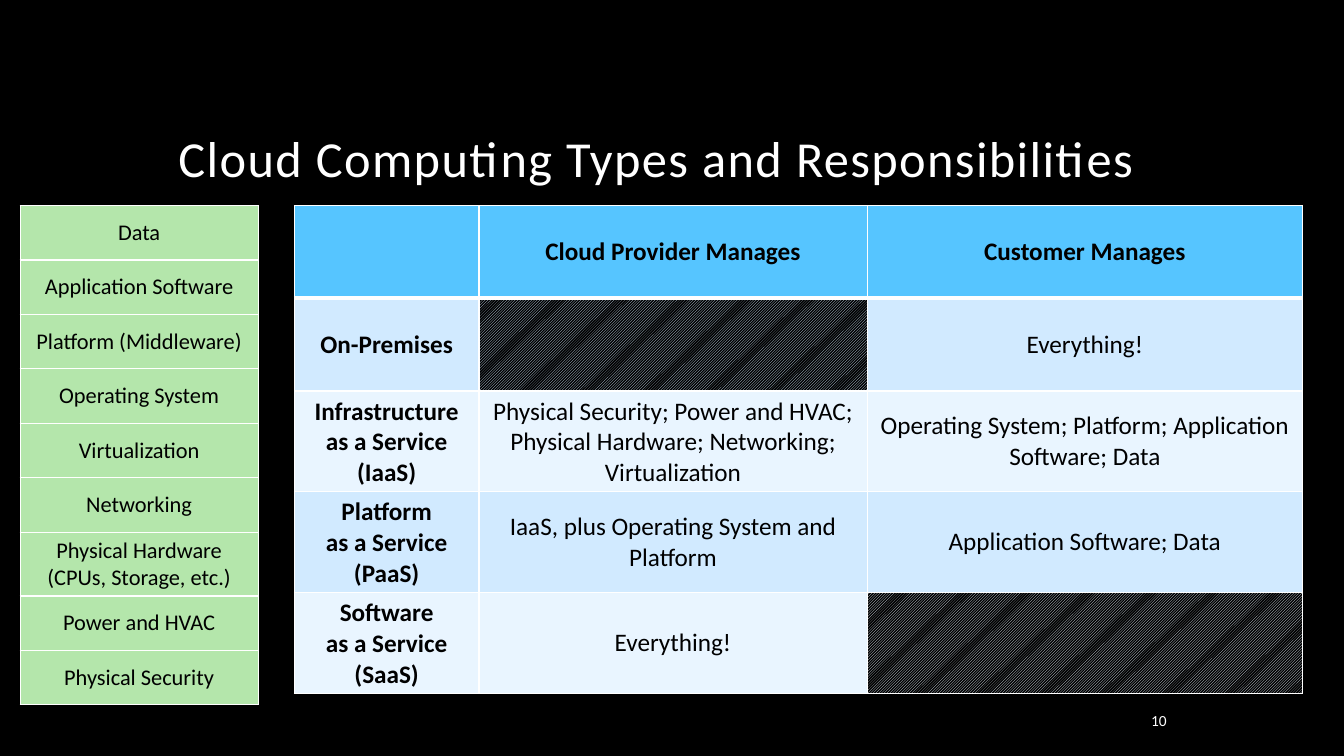
from lxml import etree
from pptx import Presentation
from pptx.dml.color import RGBColor
from pptx.enum.dml import MSO_PATTERN_TYPE
from pptx.enum.text import MSO_ANCHOR, MSO_AUTO_SIZE, PP_ALIGN
from pptx.oxml.ns import qn
from pptx.util import Inches, Pt

LEFT, CENTER, RIGHT = PP_ALIGN.LEFT, PP_ALIGN.CENTER, PP_ALIGN.RIGHT
MIDDLE, BOTTOM = MSO_ANCHOR.MIDDLE, MSO_ANCHOR.BOTTOM
NO_FIT = MSO_AUTO_SIZE.NONE
HATCH = MSO_PATTERN_TYPE.DARK_UPWARD_DIAGONAL

FONT = "Calibri"
BLACK, WHITE = "000000", "FFFFFF"
HEADER, BAND_DARK, BAND_LIGHT = "56C5FF", "D1EAFF", "E9F5FF"
GREEN = "B4E6AB"

LAYERS = [
    "Data", "Application Software", "Platform (Middleware)", "Operating System",
    "Virtualization", "Networking", "Physical Hardware\n(CPUs, Storage, etc.)",
    "Power and HVAC", "Physical Security",
]
RESPONSIBILITIES = [
    ["", "Cloud Provider Manages", "Customer Manages"],
    ["On-Premises", "", "Everything!"],
    ["Infrastructure as a Service\n(IaaS)",
     "Physical Security; Power and HVAC; Physical Hardware; Networking; Virtualization",
     "Operating System; Platform; Application Software; Data"],
    ["Platform\nas a Service\n(PaaS)", "IaaS, plus Operating System and Platform",
     "Application Software; Data"],
    ["Software\nas a Service\n(SaaS)", "Everything!", ""],
]


def rgb(color):
    """Return the colour for a hex string."""
    return RGBColor.from_string(color)


def format_text(tf, size, color, align, bold=False):
    """Format every paragraph of a text frame alike."""
    for p in tf.paragraphs:
        p.alignment = align
        p.font.name = FONT
        p.font.size = Pt(size)
        p.font.bold = bold
        p.font.color.rgb = rgb(color)


def set_borders(cell, top=1, bottom=1):
    """Draw white borders round a cell, widths in points."""
    tc_pr = cell._tc.get_or_add_tcPr()
    for side, width in (("L", 1), ("R", 1), ("T", top), ("B", bottom)):
        ln = etree.SubElement(tc_pr, qn(f"a:ln{side}"), w=str(Pt(width)))
        fill = etree.SubElement(ln, qn("a:solidFill"))
        etree.SubElement(fill, qn("a:srgbClr"), val=WHITE)


def fill_cell(cell, color, hatched=False):
    """Fill a cell plainly, or hatched over black."""
    if hatched:
        cell.fill.patterned()
        cell.fill.pattern = HATCH
        cell.fill.fore_color.rgb = rgb(color)
        cell.fill.back_color.rgb = rgb(BLACK)
    else:
        cell.fill.solid()
        cell.fill.fore_color.rgb = rgb(color)


def add_grid(s, left, top, widths, row_height, rows):
    """Add an empty table with the given column widths and equal rows."""
    frame = s.shapes.add_table(
        rows, len(widths), Inches(left), Inches(top),
        Inches(sum(widths)), Inches(row_height * rows))
    table = frame.table
    for column, width in zip(table.columns, widths):
        column.width = Inches(width)
    for row in table.rows:
        row.height = Inches(row_height)
    return table


def write_cell(cell, text, size, bold=False):
    """Write centred black text in a cell."""
    cell.text = text
    cell.vertical_anchor = MIDDLE
    format_text(cell.text_frame, size, BLACK, CENTER, bold)


def add_title(s, left, top, width, height):
    """Place and format the slide title."""
    sp = s.shapes.title
    sp.left, sp.top, sp.width, sp.height = map(Inches, (left, top, width, height))
    tf = sp.text_frame
    tf.text = "Cloud Computing Types and Responsibilities"
    tf.auto_size = NO_FIT
    tf.vertical_anchor = BOTTOM
    format_text(tf, 36, WHITE, LEFT)
    p = tf.paragraphs[0]
    p.line_spacing = 0.9
    p.runs[0]._r.get_or_add_rPr().set("spc", "100")


def add_responsibilities(s, left, top):
    """Add the table of who manages what."""
    table = add_grid(s, left, top, [1.83, 3.85, 4.32], 0.92, len(RESPONSIBILITIES))
    for i, row in enumerate(RESPONSIBILITIES):
        color = HEADER if i == 0 else BAND_DARK if i % 2 else BAND_LIGHT
        for j, text in enumerate(row):
            cell = table.cell(i, j)
            write_cell(cell, text, 18, bold=i == 0 or j == 0)
            set_borders(cell, top=3 if i == 1 else 1, bottom=3 if i == 0 else 1)
            fill_cell(cell, color, hatched=i > 0 and not text)


def add_layers(s, left, top):
    """Add the one-column stack of computing layers."""
    table = add_grid(s, left, top, [2.36], 0.54, len(LAYERS))
    for i, text in enumerate(LAYERS):
        cell = table.cell(i, 0)
        write_cell(cell, text, 16)
        set_borders(cell)
        fill_cell(cell, GREEN)


def add_slide_number(s, left, top, width, height):
    """Add the slide number."""
    sp = s.shapes.add_textbox(*map(Inches, (left, top, width, height)))
    tf = sp.text_frame
    tf.word_wrap = True
    tf.vertical_anchor = MIDDLE
    tf.text = "10"
    format_text(tf, 11, WHITE, RIGHT)


def main():
    """Build and save the slide."""
    prs = Presentation()
    prs.slide_width, prs.slide_height = Inches(13.33), Inches(7.5)
    s = prs.slides.add_slide(prs.slide_layouts[5])
    s.background.fill.solid()
    s.background.fill.fore_color.rgb = rgb(BLACK)
    add_title(s, 1.67, 0.42, 10, 1.5)
    add_slide_number(s, 10.75, 7, 0.92, 0.3)
    add_responsibilities(s, 2.92, 2.04)
    add_layers(s, 0.2, 2.04)
    prs.save("out.pptx")


if __name__ == "__main__":
    main()
